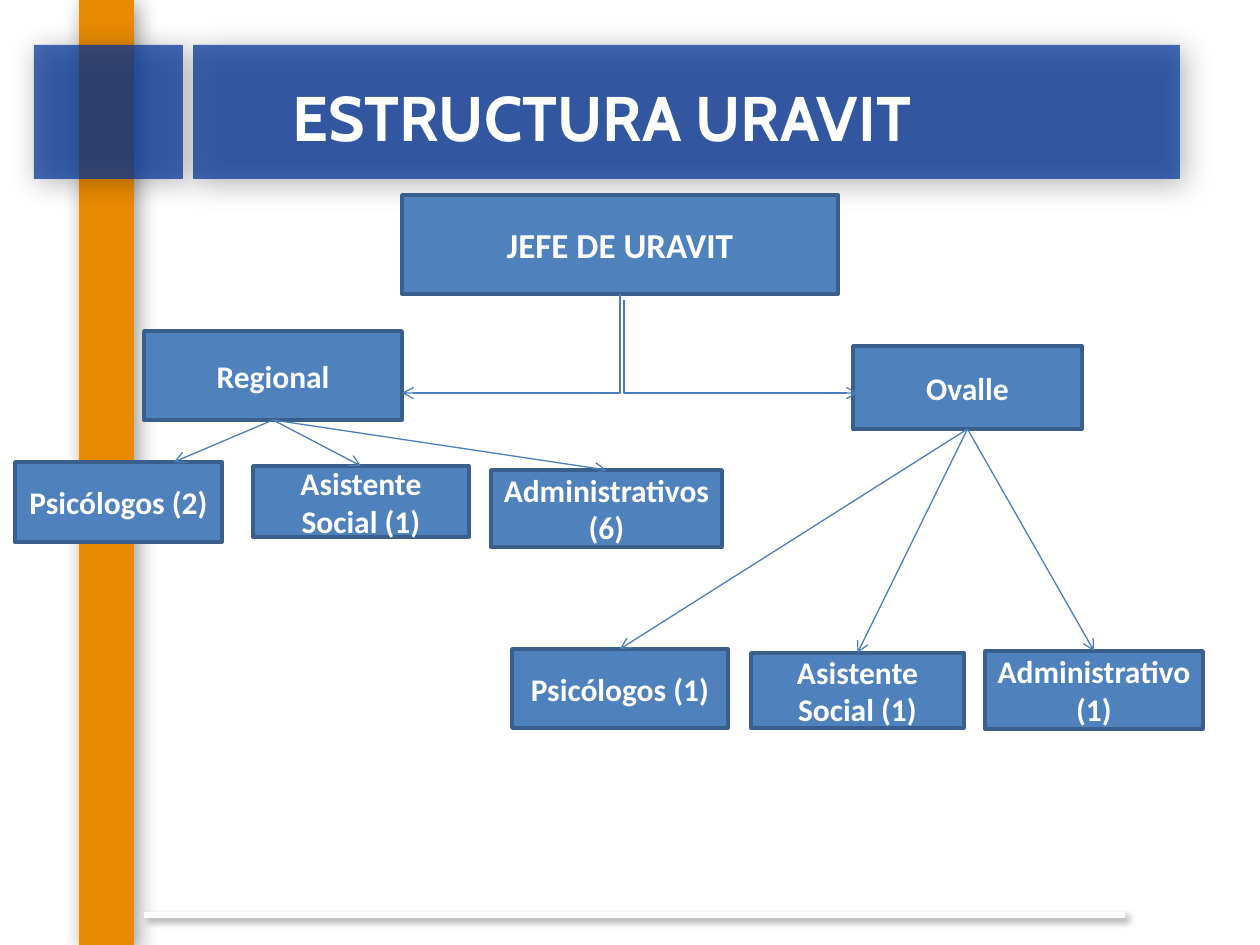
from lxml import etree
from pptx import Presentation
from pptx.dml.color import RGBColor
from pptx.enum.shapes import MSO_CONNECTOR, MSO_SHAPE
from pptx.enum.text import MSO_ANCHOR, PP_ALIGN
from pptx.oxml.ns import qn
from pptx.util import Emu, Pt

# Content: lengths in px, 126 px to the inch
TITLE = "ESTRUCTURA URAVIT"
ORANGE, NAVY, WHITE = "E98B01", "003399", "FFFFFF"
BOX_FILL, BOX_LINE, ARROW = "4F81BD", "3A5F8C", "4B7EBC"

# (left, top, width, height), colour, opacity %, shadow blur in points
BANDS = [
    ((79, 0, 55, 949), ORANGE, 100, 12),
    ((193, 45, 987, 134), NAVY, 72, 17),
    ((144, 912, 981, 6), WHITE, 100, 4),
    ((34, 45, 149, 134), NAVY, 72, 17),
]
HEAD = ("JEFE DE URAVIT", (402, 195, 436, 99))
# Office, its box, elbow start and end, its staff
OFFICES = [
    ("Regional", (144, 331, 258, 89), (620, 294), (402, 393), [
        ("Psicólogos (2)", (15, 462, 207, 80)),
        ("Asistente Social (1)", (253, 466, 216, 71)),
        ("Administrativos (6)", (491, 470, 231, 77)),
    ]),
    ("Ovalle", (853, 346, 229, 83), (624, 300), (858, 393), [
        ("Psicólogos (1)", (512, 649, 216, 79)),
        ("Asistente Social (1)", (751, 653, 213, 75)),
        ("Administrativo (1)", (985, 651, 218, 78)),
    ]),
]
# Arrow tips that do not sit at the middle of the box top
OFF_CENTRE = {"Psicólogos (2)": (174, 462)}
BOTTOM, TOP = 2, 0  # connection sites of a rectangle


def px(n):
    return Emu(round(n * 914400 / 126))


def rgb(value):
    return RGBColor.from_string(value)


def sub(parent, tag, **attrs):
    el = etree.SubElement(parent, qn(tag))
    for key, value in attrs.items():
        el.set(key, str(value))
    return el


def write(sp, text, size, font="Calibri", right=None):
    tf = sp.text_frame
    tf.word_wrap = True
    tf.vertical_anchor = MSO_ANCHOR.MIDDLE
    if right is not None:
        tf.margin_right = px(right)
    p = tf.paragraphs[0]
    p.alignment = PP_ALIGN.CENTER
    r = p.add_run()
    r.text = text
    r.font.name, r.font.size, r.font.bold = font, Pt(size), True
    r.font.color.rgb = rgb(WHITE)


def rect(at, fill):
    sp = s.shapes.add_shape(MSO_SHAPE.RECTANGLE, *map(px, at))
    sp.shadow.inherit = False
    sp.fill.solid()
    sp.fill.fore_color.rgb = rgb(fill)
    return sp


def band(at, fill, opacity, blur):
    sp = rect(at, fill)
    sp.line.fill.background()
    props = sp._element.spPr
    if opacity < 100:
        colour = props.find(qn("a:solidFill")).find(qn("a:srgbClr"))
        sub(colour, "a:alpha", val=opacity * 1000)
    shadow = sub(props.find(qn("a:effectLst")), "a:outerShdw", blurRad=Pt(blur),
                 dist=Pt(3), dir=45 * 60000, algn="tl", rotWithShape=0)
    sub(sub(shadow, "a:srgbClr", val="000000"), "a:alpha", val=40000)


def box(text, at, size=18):
    sp = rect(at, BOX_FILL)
    sp.line.color.rgb = rgb(BOX_LINE)
    sp.line.width = Pt(2)
    write(sp, text, size)
    return sp


def arrow(start, end, kind=MSO_CONNECTOR.STRAIGHT):
    c = s.shapes.add_connector(kind, *map(px, (*start, *end)))
    c.line.color.rgb = rgb(ARROW)
    c.line.width = Pt(0.75)
    sub(c.line._get_or_add_ln(), "a:tailEnd", type="arrow")
    sub(c._element.spPr, "a:effectLst")
    return c


def elbow(start, end):
    """Arrow that goes down from start, then sideways to end."""
    c = arrow(start, end, MSO_CONNECTOR.ELBOW)
    (x1, y1), (x2, y2) = start, end
    w, h = y2 - y1, abs(x2 - x1)  # the frame lies on its side
    c.left, c.top = px((x1 + x2 - w) / 2), px((y1 + y2 - h) / 2)
    c.width, c.height = px(w), px(h)
    props = c._element.spPr
    props.find(qn("a:prstGeom")).set("prst", "bentConnector2")
    xfrm = props.find(qn("a:xfrm"))
    to_right = x2 > x1
    xfrm.set("rot", str((270 if to_right else 90) * 60000))
    xfrm.set("flipH", "1" if to_right else "0")


prs = Presentation()
prs.slide_width, prs.slide_height = px(1260), px(945)
s = prs.slides.add_slide(prs.slide_layouts[6])

# Backdrop and title
for item in BANDS:
    band(*item)
title = s.shapes.add_textbox(*map(px, (63, 38, 1134, 157)))
write(title, TITLE, 36, font="Cabin", right=69)

# Boxes
box(*HEAD, size=20)
links = []
for name, at, start, end, staff in OFFICES:
    office = box(name, at)
    links += [(office, box(*member), member) for member in staff]

# Arrows
for name, at, start, end, staff in OFFICES:
    elbow(start, end)
for office, member_box, (name, (x, y, w, h)) in links:
    c = arrow((0, 0), OFF_CENTRE.get(name, (x + w / 2, y)))
    c.begin_connect(office, BOTTOM)
    if name not in OFF_CENTRE:
        c.end_connect(member_box, TOP)

prs.save("out.pptx")
